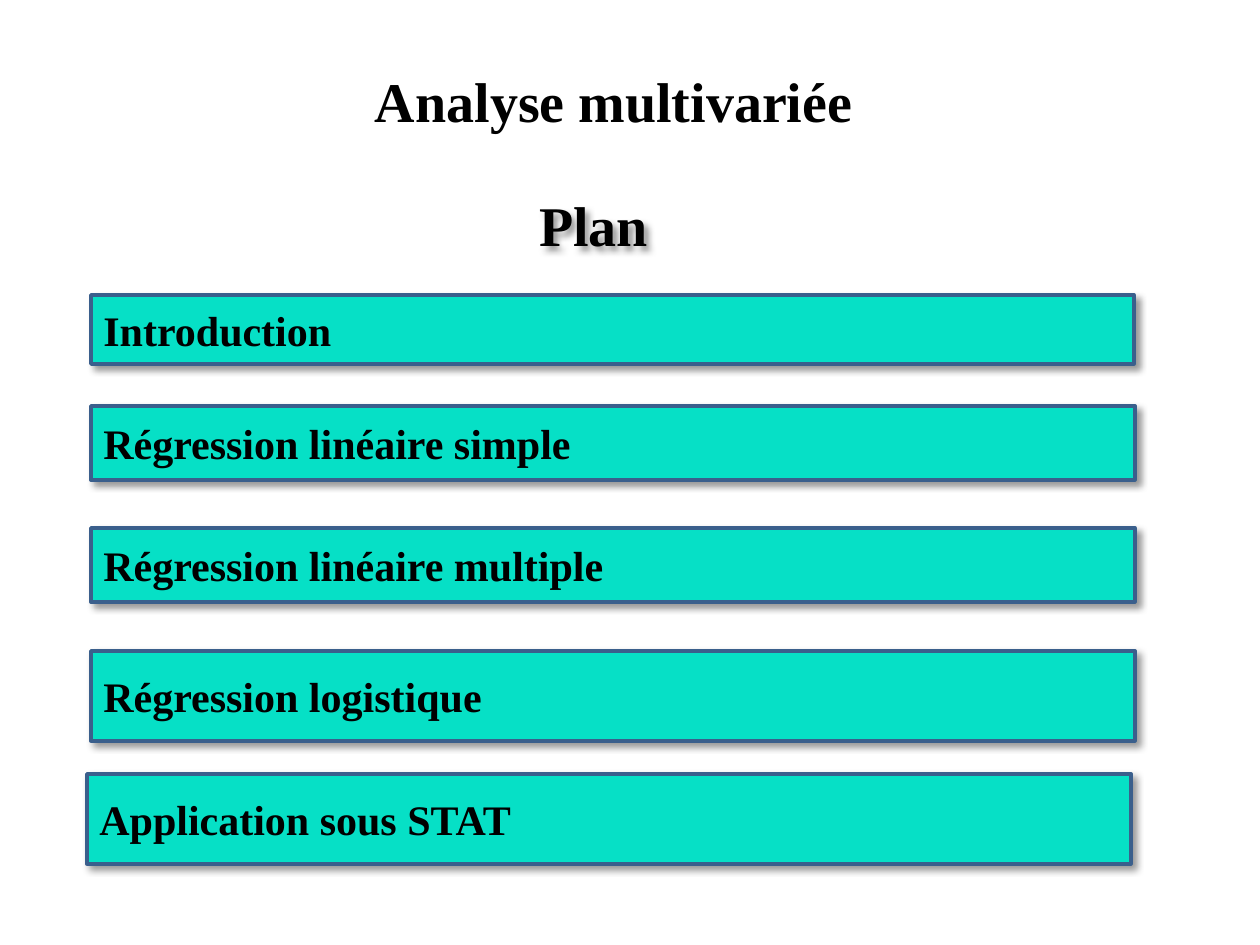
from lxml.etree import SubElement
from pptx import Presentation
from pptx.dml.color import RGBColor
from pptx.enum.shapes import MSO_SHAPE
from pptx.enum.text import MSO_ANCHOR, PP_ALIGN
from pptx.oxml.ns import qn
from pptx.util import Inches, Pt

BLACK = RGBColor(0x00, 0x00, 0x00)
TURQUOISE = RGBColor(0x06, 0xE0, 0xC6)
BLUE = RGBColor(0x3A, 0x5F, 0x8C)
FONT = "Times New Roman"

BARS = [
    ("Introduction", (91, 295, 1043, 69)),
    ("Régression linéaire simple", (91, 406, 1044, 74)),
    ("Régression linéaire multiple", (91, 528, 1044, 74)),
    ("Régression logistique", (91, 651, 1044, 90)),
    ("Application sous STAT", (87, 774, 1044, 90)),
]


def px(n):
    return round(n * Inches(1) / 126)


def add_shadow(sp):
    sp.shadow.inherit = False
    effects = sp._element.spPr.find(qn("a:effectLst"))
    shadow = SubElement(effects, qn("a:outerShdw"), blurRad=str(Pt(4)),
                        dist=str(Pt(3)), dir=str(45 * 60000),
                        algn="tl", rotWithShape="0")
    color = SubElement(shadow, qn("a:srgbClr"), val=str(BLACK))
    SubElement(color, qn("a:alpha"), val="40000")


def write(sp, text, size, align):
    tf = sp.text_frame
    tf.word_wrap = True
    tf.vertical_anchor = MSO_ANCHOR.MIDDLE
    p = tf.paragraphs[0]
    p.alignment = align
    r = p.add_run()
    r.text = text
    r.font.name = FONT
    r.font.size = Pt(size)
    r.font.bold = True
    r.font.color.rgb = BLACK


def place_title(s, box, text):
    sp = s.shapes.title
    sp.left, sp.top, sp.width, sp.height = map(px, box)
    write(sp, text, 32, PP_ALIGN.CENTER)


def add_heading(s, box, text):
    sp = s.shapes.add_textbox(*map(px, box))
    sp.fill.background()
    add_shadow(sp)
    write(sp, text, 32, PP_ALIGN.CENTER)


def add_bar(s, box, text):
    sp = s.shapes.add_shape(MSO_SHAPE.RECTANGLE, *map(px, box))
    sp.fill.solid()
    sp.fill.fore_color.rgb = TURQUOISE
    sp.line.color.rgb = BLUE
    sp.line.width = Pt(2)
    add_shadow(sp)
    write(sp, text, 24, PP_ALIGN.LEFT)


def main():
    prs = Presentation()
    prs.slide_width, prs.slide_height = Inches(10), Inches(7.5)
    s = prs.slides.add_slide(prs.slide_layouts[5])
    place_title(s, (176, 66, 876, 69), "Analyse multivariée")
    add_heading(s, (302, 190, 583, 69), "Plan")
    for text, box in BARS:
        add_bar(s, box, text)
    prs.save("out.pptx")


if __name__ == "__main__":
    main()
